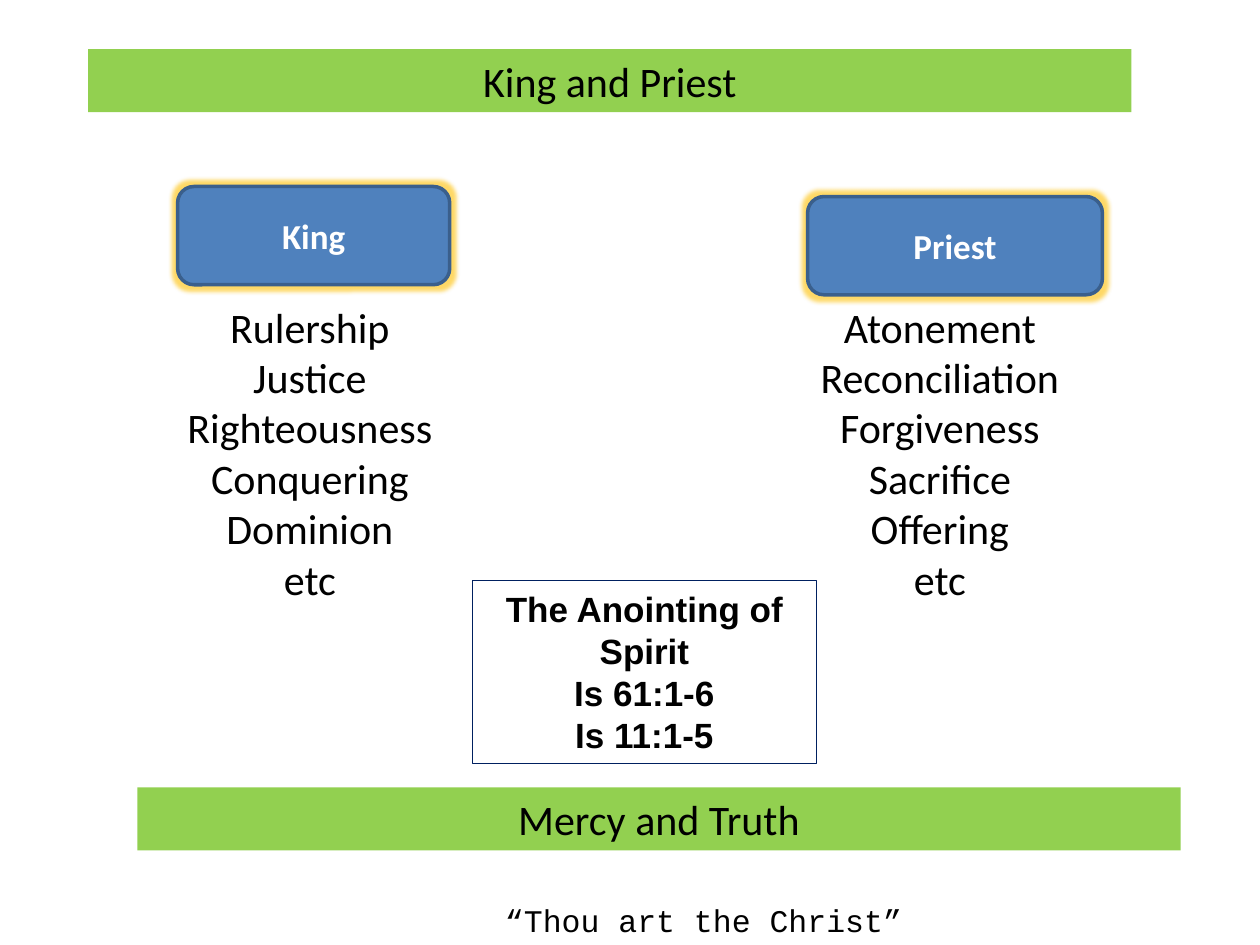
from lxml.etree import SubElement
from pptx import Presentation
from pptx.dml.color import RGBColor
from pptx.enum.shapes import MSO_SHAPE as Shape
from pptx.enum.text import MSO_ANCHOR as Anchor, MSO_AUTO_SIZE as AutoSize, PP_ALIGN as Align
from pptx.oxml.ns import qn
from pptx.util import Emu, Pt

# Content
TITLE = "King and Priest"
SUMMARY = "Mercy and Truth"
QUOTE = "“Thou art the Christ”"
ANOINTING = ["The Anointing of Spirit", "Is 61:1-6", "Is 11:1-5"]
OFFICES = [  # name, badge place, list place, duties
    ("King", (141, 148, 216, 78), (86, 234, 320, 252),
     ["Rulership", "Justice", "Righteousness", "Conquering", "Dominion", "etc"]),
    ("Priest", (641, 156, 234, 78), (586, 234, 320, 252),
     ["Atonement", "Reconciliation", "Forgiveness", "Sacrifice", "Offering", "etc"]),
]

COLORS = {"green": "92D050", "blue": "4F81BD", "edge": "3A5F8C",
          "navy": "002060", "gold": "FFC000", "black": "000000", "white": "FFFFFF"}
EMU_PER_PX = 9144  # 100 px to the inch


def px(value):
    return Emu(value * EMU_PER_PX)


def color(name):
    return RGBColor.from_string(COLORS[name])


def place(box, spot):
    box.left, box.top, box.width, box.height = map(px, spot)


def write(box, lines, size=24, font="Calibri", ink="black", bold=False,
          align=Align.CENTER, anchor=Anchor.TOP):
    frame = box.text_frame
    frame.word_wrap = True
    frame.auto_size = AutoSize.NONE
    frame.vertical_anchor = anchor
    for index, line in enumerate(lines):
        para = frame.add_paragraph() if index else frame.paragraphs[0]
        para.alignment = align
        span = para.add_run()
        span.text = line
        span.font.size = Pt(size)
        span.font.name = font
        span.font.bold = bold
        span.font.color.rgb = color(ink)


def paint(box, fill=None, line=None, width=0):
    if fill:
        box.fill.solid()
        box.fill.fore_color.rgb = color(fill)
    else:
        box.fill.background()
    if line:
        box.line.color.rgb = color(line)
        box.line.width = Pt(width)
    else:
        box.line.fill.background()


def add_box(page, kind, spot, **style):
    box = page.shapes.add_shape(kind, *map(px, spot))
    box.shadow.inherit = False
    paint(box, **style)
    return box


def add_text(page, spot, lines, **style):
    write(page.shapes.add_textbox(*map(px, spot)), lines, **style)


def add_glow(box, name, radius, alpha):
    effects = box._element.spPr.find(qn("a:effectLst"))
    glow = SubElement(effects, qn("a:glow"), rad=str(Pt(radius)))
    tint = SubElement(glow, qn("a:srgbClr"), val=COLORS[name])
    SubElement(tint, qn("a:alpha"), val=str(alpha * 1000))


def main():
    deck = Presentation()
    deck.slide_width, deck.slide_height = px(1000), px(750)
    page = deck.slides.add_slide(deck.slide_layouts[5])

    # Title and summary bands
    title = page.shapes.title
    place(title, (70, 39, 828, 50))
    paint(title, fill="green")
    write(title, [TITLE])
    band = add_box(page, Shape.RECTANGLE, (109, 625, 828, 50), fill="green")
    write(band, [SUMMARY])

    # Offices: glowing badge over a list of duties
    for name, badge_spot, list_spot, duties in OFFICES:
        add_text(page, list_spot, duties)
        badge = add_box(page, Shape.ROUNDED_RECTANGLE, badge_spot,
                        fill="blue", line="edge", width=2)
        add_glow(badge, "gold", radius=5, alpha=60)
        write(badge, [name], size=20, ink="white", bold=True, anchor=Anchor.MIDDLE)

    # Anointing box
    frame = add_box(page, Shape.RECTANGLE, (375, 461, 273, 145), line="navy", width=0.75)
    write(frame, ANOINTING, size=20, font="Arial", bold=True)

    # Closing quote
    add_text(page, (391, 710, 500, 40), [QUOTE], size=18, font="Courier New",
             align=Align.LEFT)

    deck.save("out.pptx")


if __name__ == "__main__":
    main()
